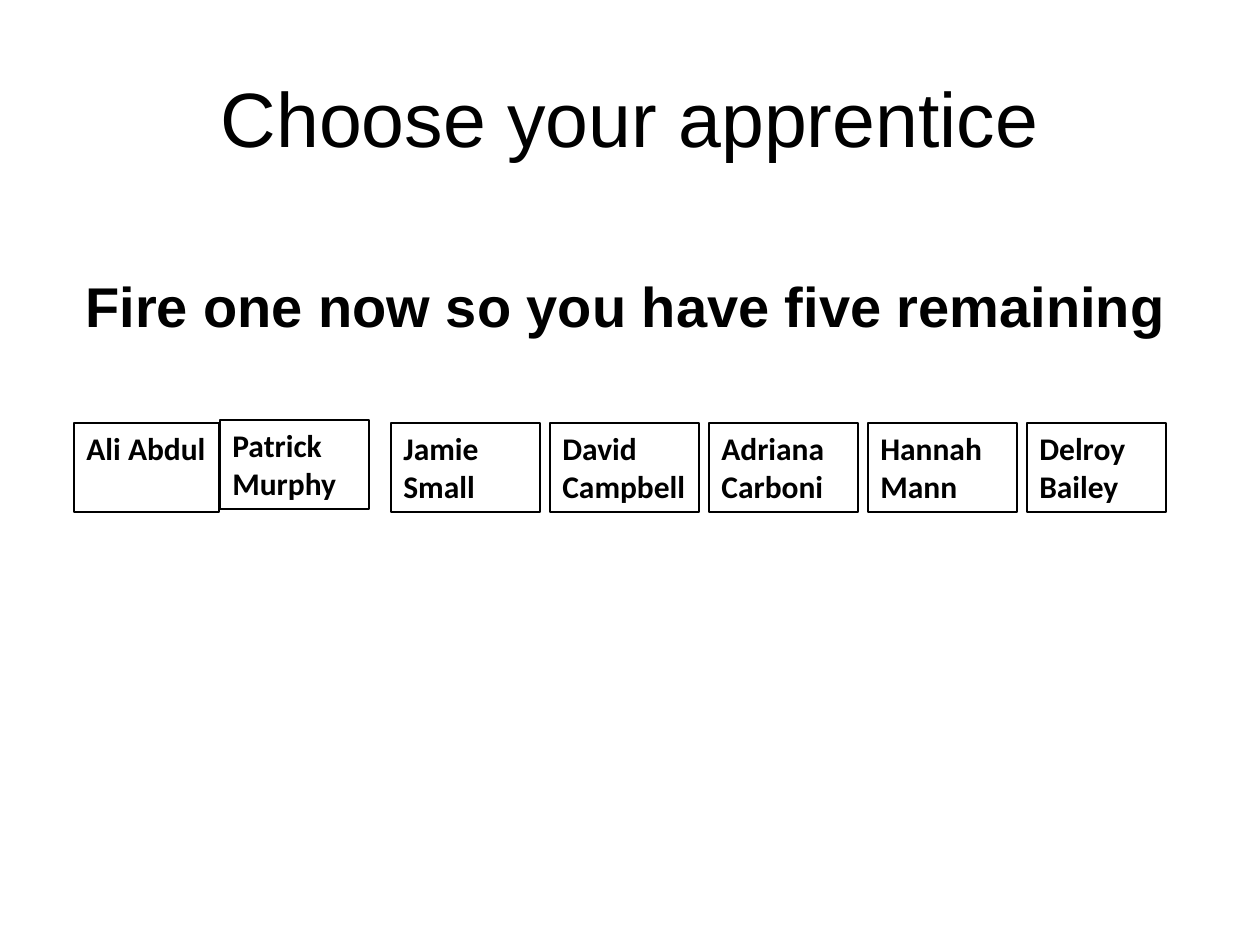
from pptx import Presentation, util as u
from pptx.dml import color
from pptx.enum import shapes, text

SCALE = 914400 / 126
BLACK = "000000"
ROW_TOP, CARD_WIDTH, CARD_HEIGHT = 423, 149, 89
GRID_LEFT, GRID_STEP = 391, 159
GRID_NAMES = ["Jamie Small", "David Campbell", "Adriana Carboni", "Hannah Mann"]


def px(length):
    """Turn pixels into EMU."""
    return u.Emu(round(length * SCALE))


def rgb(value):
    """Turn a hex string into a colour."""
    return color.RGBColor.from_string(value)


def write(shape, words, font="Arial", size=32, bold=False, hue=BLACK,
          align=text.PP_ALIGN.LEFT, anchor=text.MSO_ANCHOR.MIDDLE, wrap=True):
    """Fill a shape with formatted text, one paragraph per line."""
    frame = shape.text_frame
    frame.word_wrap = wrap
    frame.vertical_anchor = anchor
    frame.text = words
    for paragraph in frame.paragraphs:
        paragraph.alignment = align
        paragraph.font.name = font
        paragraph.font.size = u.Pt(size)
        paragraph.font.bold = bold
        paragraph.font.color.rgb = rgb(hue)


def add_heading(slide, words, left, top, width, height, **text_format):
    """Add a text box that holds a heading."""
    box = slide.shapes.add_textbox(px(left), px(top), px(width), px(height))
    write(box, words, **text_format)


def add_card(slide, name, left, top=ROW_TOP, width=CARD_WIDTH, wrap=True):
    """Add an outlined card with a candidate's name."""
    card = slide.shapes.add_shape(shapes.MSO_SHAPE.RECTANGLE, px(left), px(top),
                                  px(width), px(CARD_HEIGHT))
    card.shadow.inherit = False
    card.fill.background()
    card.line.color.rgb = rgb(BLACK)
    card.line.width = u.Pt(0.75)
    write(card, name, font="Calibri", size=18, bold=True,
          anchor=text.MSO_ANCHOR.TOP, wrap=wrap)


def main():
    """Build the slide and save it."""
    presentation = Presentation()
    presentation.slide_width, presentation.slide_height = px(1260), px(945)
    slide = presentation.slides.add_slide(presentation.slide_layouts[6])
    add_heading(slide, "Choose your apprentice", 63, 38, 1134, 158,
                size=44, align=text.PP_ALIGN.CENTER)
    add_heading(slide, "Fire one now so you have five remaining", 73, 267, 1134, 76,
                bold=True)
    add_card(slide, "Ali Abdul", 74, width=145, wrap=False)
    add_card(slide, "Patrick Murphy", 220, top=420)
    for column, name in enumerate(GRID_NAMES):
        add_card(slide, name, GRID_LEFT + column * GRID_STEP)
    add_card(slide, "Delroy\nBailey", GRID_LEFT + len(GRID_NAMES) * GRID_STEP, width=139)
    presentation.save("out.pptx")


if __name__ == "__main__":
    main()
